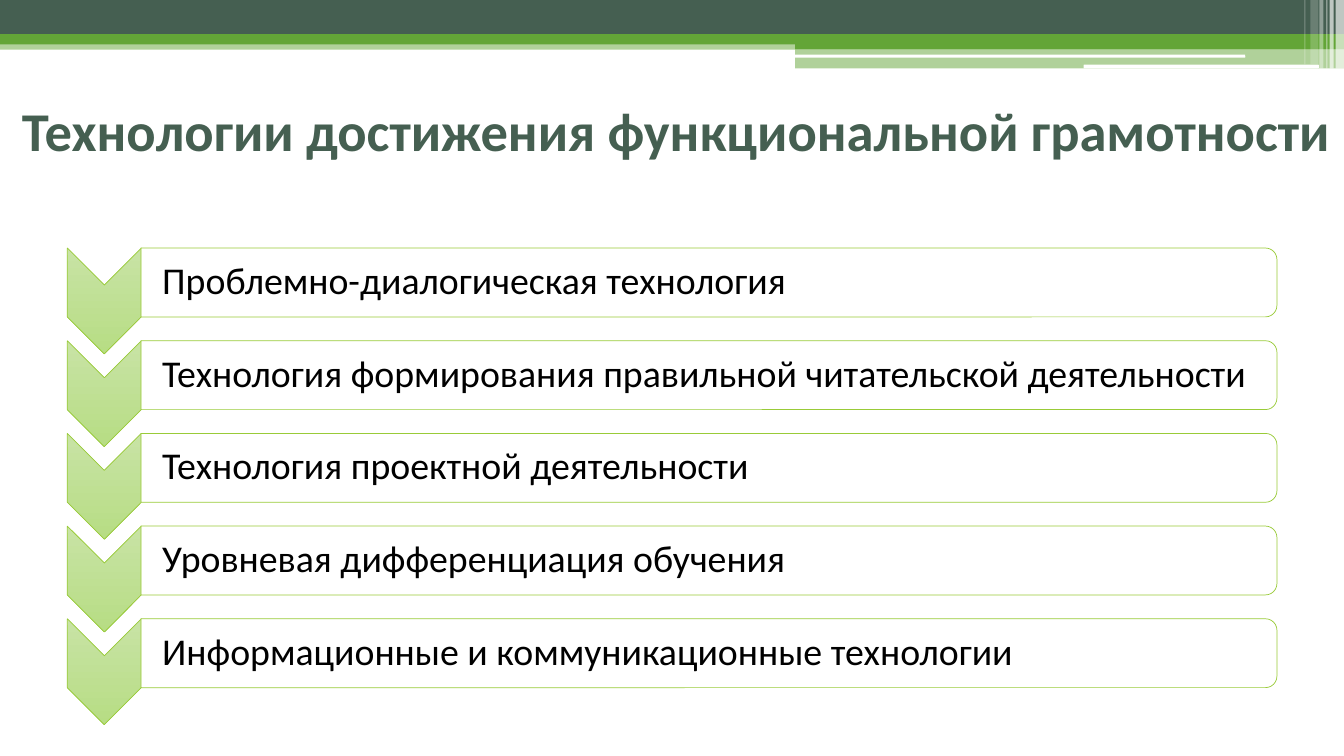
from lxml.etree import SubElement
from pptx import Presentation
from pptx.dml.color import RGBColor
from pptx.enum.shapes import MSO_SHAPE
from pptx.enum.text import MSO_ANCHOR
from pptx.oxml.ns import qn
from pptx.util import Pt

DARK, GREEN, LIME, WHITE, BLACK = "455F51", "63A537", "99CB38", "FFFFFF", "000000"
SHADES = "C8E3A5", "B7DD84"
RECT, ROUND = MSO_SHAPE.RECTANGLE, MSO_SHAPE.ROUNDED_RECTANGLE

# Header bands: kind, (left, top, width, height), colour, opacity in percent
BANDS = [
    (RECT, (0, 28.8, 960, 6.6), GREEN, 50),
    (RECT, (0, 0, 960, 24.5), DARK, 100),
    (RECT, (0, 24.5, 960, 7.2), GREEN, 100),
    (RECT, (568, 28, 392, 7.2), GREEN, 100),
    (RECT, (568, 35.2, 392, 13.7), GREEN, 50),
    (ROUND, (567.5, 39, 322, 2.2), WHITE, 100),
    (ROUND, (774, 46.2, 168, 2.6), WHITE, 100),
]
# Pale stripes at the right: left, width, height, opacity in percent
STRIPES = [
    (954, 6, 49, 65), (949.7, 2.9, 49, 65), (947.5, 0.7, 49, 60),
    (942.5, 2.9, 49, 40), (936, 5.8, 46, 20), (931.7, 0.7, 46, 30),
]
ITEMS = [
    "Проблемно-диалогическая технология",
    "Технология формирования правильной читательской деятельности",
    "Технология проектной деятельности",
    "Уровневая дифференциация обучения",
    "Информационные и коммуникационные технологии",
]
PITCH = 66.2


def color(code):
    return RGBColor.from_string(code)


def apply(target, style):
    for name, value in style.items():
        setattr(target, name, value)


def add_block(slide, kind, box, fill, alpha=100, line=None, turn=0):
    shape = slide.shapes.add_shape(kind, *map(Pt, box))
    shape.shadow.inherit = False
    shape.rotation = turn
    shape.fill.solid()
    shape.fill.fore_color.rgb = color(fill)
    if alpha < 100:
        tone = shape.fill._xPr.find(".//" + qn("a:srgbClr"))
        SubElement(tone, qn("a:alpha"), val=str(alpha * 1000))
    if line:
        shape.line.color.rgb = color(line)
        shape.line.width = Pt(0.5)
    else:
        shape.line.fill.background()
    return shape


def add_shade(shape):
    # The gradient runs down the slide, whatever the rotation
    shape.fill.gradient()
    shape.fill.gradient_angle = 270
    for stop, code in zip(shape.fill.gradient_stops, SHADES):
        stop.color.rgb = color(code)
    shape.fill._xPr.find(qn("a:gradFill")).set("rotWithShape", "0")


def add_text(slide, box, text, font, frame, space=1.0):
    body = slide.shapes.add_textbox(*map(Pt, box)).text_frame
    apply(body, {"word_wrap": True, "vertical_anchor": MSO_ANCHOR.MIDDLE, **frame})
    par = body.paragraphs[0]
    par.line_spacing = space
    run = par.add_run()
    run.text = text
    tint = font["tint"]
    apply(run.font, {"name": "Calibri", "size": Pt(font["size"]), "bold": font["bold"]})
    run.font.color.rgb = color(tint)


def add_row(slide, index, text):
    down = index * PITCH
    arrow = add_block(slide, MSO_SHAPE.CHEVRON, (36.7, 188.6 + down, 75.6, 52.8),
                      SHADES[0], line=LIME, turn=90)
    add_shade(arrow)
    add_block(slide, MSO_SHAPE.ROUND_2_SAME_RECTANGLE,
              (481.8, -203.9 + down, 49.2, 811.4), WHITE, 90, LIME, 90)
    add_text(slide, (100.8, 179.3 + down, 808.6, 44.6), text,
             {"size": 27, "bold": False, "tint": BLACK},
             {"margin_left": Pt(15.1), "margin_right": Pt(1.4),
              "margin_top": Pt(1.4), "margin_bottom": Pt(1.4)}, 0.9)


def main():
    deck = Presentation()
    deck.slide_width, deck.slide_height = Pt(960), Pt(540)
    slide = deck.slides.add_slide(deck.slide_layouts[6])

    # Header
    for kind, box, fill, alpha in BANDS:
        add_block(slide, kind, box, fill, alpha)
    for left, width, height, alpha in STRIPES:
        add_block(slide, RECT, (left, 0, width, height), WHITE, alpha)

    # Chevron list
    for index, text in enumerate(ITEMS):
        add_row(slide, index, text)

    # Title
    add_text(slide, (8.6, 50.4, 951.4, 84.2),
             "Технологии достижения функциональной грамотности",
             {"size": 39, "bold": True, "tint": DARK}, {"margin_right": 0})
    deck.save("out.pptx")


if __name__ == "__main__":
    main()
